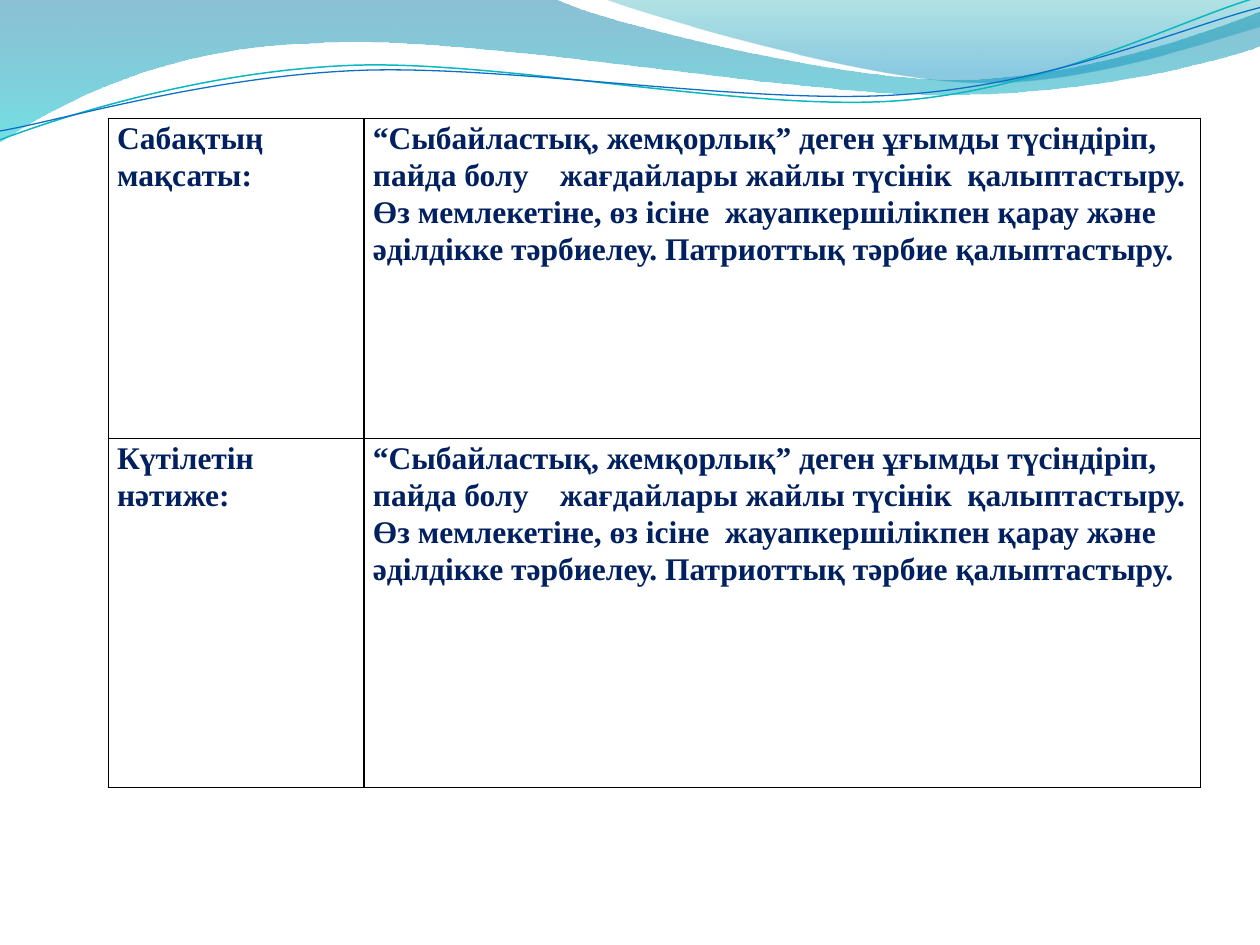
from dataclasses import dataclass

from lxml import etree
from pptx import Presentation
from pptx.dml.color import RGBColor
from pptx.oxml import parse_xml
from pptx.oxml.ns import nsdecls, qn
from pptx.util import Inches, Pt

BLANK_LAYOUT = 6


@dataclass(frozen=True)
class Theme:
    font: str = "Times New Roman"
    size: int = 18
    text: str = "002060"
    border: str = "000000"
    border_width: float = 1


THEME = Theme()

# Content: lesson table
GOAL = ("“Сыбайластық, жемқорлық” деген ұғымды түсіндіріп, пайда болу    жағдайлары "
        "жайлы түсінік  қалыптастыру. Өз мемлекетіне, өз ісіне  жауапкершілікпен "
        "қарау және әділдікке тәрбиелеу. Патриоттық тәрбие қалыптастыру.")
ROWS = [("Сабақтың мақсаты:", GOAL), ("Күтілетін нәтиже:", GOAL)]
TABLE_LEFT, TABLE_TOP = 0.86, 0.94
COL_WIDTHS = (2.03, 6.64)
ROW_HEIGHTS = (2.54, 2.77)

# Content: header waves; a step of two numbers is a line, one of six a cubic curve
# Gradient stops are (position %, colour, opacity %), from top to bottom
FILLED_WAVES = [
    ((0, 0), [(4.4, -0.01), (4.76, 0.17, 6.64, 0.63, 7.58, 0.63),
              (8.53, 0.63, 9.58, 0.26, 10, 0.09), (10.01, 0.36),
              (9.83, 0.44, 8.7, 0.76, 7.46, 0.75), (6.22, 0.75, 3.82, 0.28, 2.57, 0.34),
              (1.29, 0.36, 0.46, 0.83, -0.01, 1.13), (0, 0)],
     [(0, "0074A1", 45), (100, "00C6CF", 55)]),
    ((4.79, -0.01), [(5.09, 0.11, 6.82, 0.62, 7.69, 0.65),
                     (8.56, 0.69, 9.61, 0.32, 10, 0.21), (10, 0), (4.79, -0.01)],
     [(0, "00A1A9", 30), (80, "008BBF", 45)]),
]
LINE_WAVES = [
    ((0, 1.11), [(0.48, 0.93, 1.58, 0.57, 2.77, 0.52), (3.95, 0.47, 5.93, 0.89, 7.13, 0.8),
                 (8.33, 0.71, 9.38, 0.15, 9.98, -0.02)], "0AB8BF", 0.85),
    ((0, 1.04), [(0.47, 0.96, 1.64, 0.61, 2.83, 0.56), (4.03, 0.51, 5.97, 0.84, 7.17, 0.75),
                 (8.36, 0.67, 9.41, 0.21, 10, 0.06)], "0F6FC6", 0.75),
]


def add_wave(slide, start, steps, close):
    """Draw the steps as straight segments, then join each curve's three into one cubic."""
    points = [(Inches(step[i]), Inches(step[i + 1]))
              for step in steps for i in range(0, len(step), 2)]
    builder = slide.shapes.build_freeform(Inches(start[0]), Inches(start[1]))
    builder.add_line_segments(points, close=close)
    sp = builder.convert_to_shape()
    sp.shadow.inherit = False

    segments = iter(list(sp.element.iter(qn("a:lnTo"))))
    for step in steps:
        parts = [next(segments) for _ in range(len(step) // 2)]
        if len(parts) == 3:
            curve = etree.Element(qn("a:cubicBezTo"))
            parts[0].addprevious(curve)
            for part in parts:
                curve.append(part[0])
                part.getparent().remove(part)
    return sp


def fill_gradient(sp, stops):
    gs = "".join(f'<a:gs pos="{pos * 1000}"><a:srgbClr val="{color}">'
                 f'<a:alpha val="{alpha * 1000}"/></a:srgbClr></a:gs>'
                 for pos, color, alpha in stops)
    grad = parse_xml(f'<a:gradFill {nsdecls("a")} rotWithShape="1"><a:gsLst>{gs}</a:gsLst>'
                     '<a:lin ang="5400000" scaled="0"/></a:gradFill>')
    sp.element.spPr.find(qn("a:custGeom")).addnext(grad)


def add_borders(cell):
    tcPr = cell._tc.get_or_add_tcPr()
    for side in ("lnL", "lnR", "lnT", "lnB"):
        ln = etree.SubElement(tcPr, qn(f"a:{side}"), w=str(Pt(THEME.border_width)))
        fill = etree.SubElement(ln, qn("a:solidFill"))
        etree.SubElement(fill, qn("a:srgbClr"), val=THEME.border)


def set_cell(cell, text):
    add_borders(cell)
    cell.fill.background()
    cell.margin_left = cell.margin_right = Inches(0.07)
    cell.margin_top = cell.margin_bottom = 0
    cell.text = text
    p = cell.text_frame.paragraphs[0]
    p.line_spacing = 1.07
    p.space_after = Pt(8)
    p.font.name = THEME.font
    p.font.size = Pt(THEME.size)
    p.font.bold = True
    p.font.color.rgb = RGBColor.from_string(THEME.text)


def main():
    prs = Presentation()
    prs.slide_width, prs.slide_height = Inches(10), Inches(7.5)
    slide = prs.slides.add_slide(prs.slide_layouts[BLANK_LAYOUT])

    # Header waves
    for start, steps, stops in FILLED_WAVES:
        sp = add_wave(slide, start, steps, close=True)
        fill_gradient(sp, stops)
        sp.line.fill.background()
    for start, steps, color, width in LINE_WAVES:
        sp = add_wave(slide, start, steps, close=False)
        sp.fill.background()
        sp.line.color.rgb = RGBColor.from_string(color)
        sp.line.width = Pt(width)

    # Lesson table
    table = slide.shapes.add_table(
        len(ROWS), len(COL_WIDTHS), Inches(TABLE_LEFT), Inches(TABLE_TOP),
        Inches(sum(COL_WIDTHS)), Inches(sum(ROW_HEIGHTS))).table
    table.first_row = table.horz_banding = False
    for column, width in zip(table.columns, COL_WIDTHS):
        column.width = Inches(width)
    for row, height, texts in zip(table.rows, ROW_HEIGHTS, ROWS):
        row.height = Inches(height)
        for cell, text in zip(row.cells, texts):
            set_cell(cell, text)

    prs.save("out.pptx")


if __name__ == "__main__":
    main()
